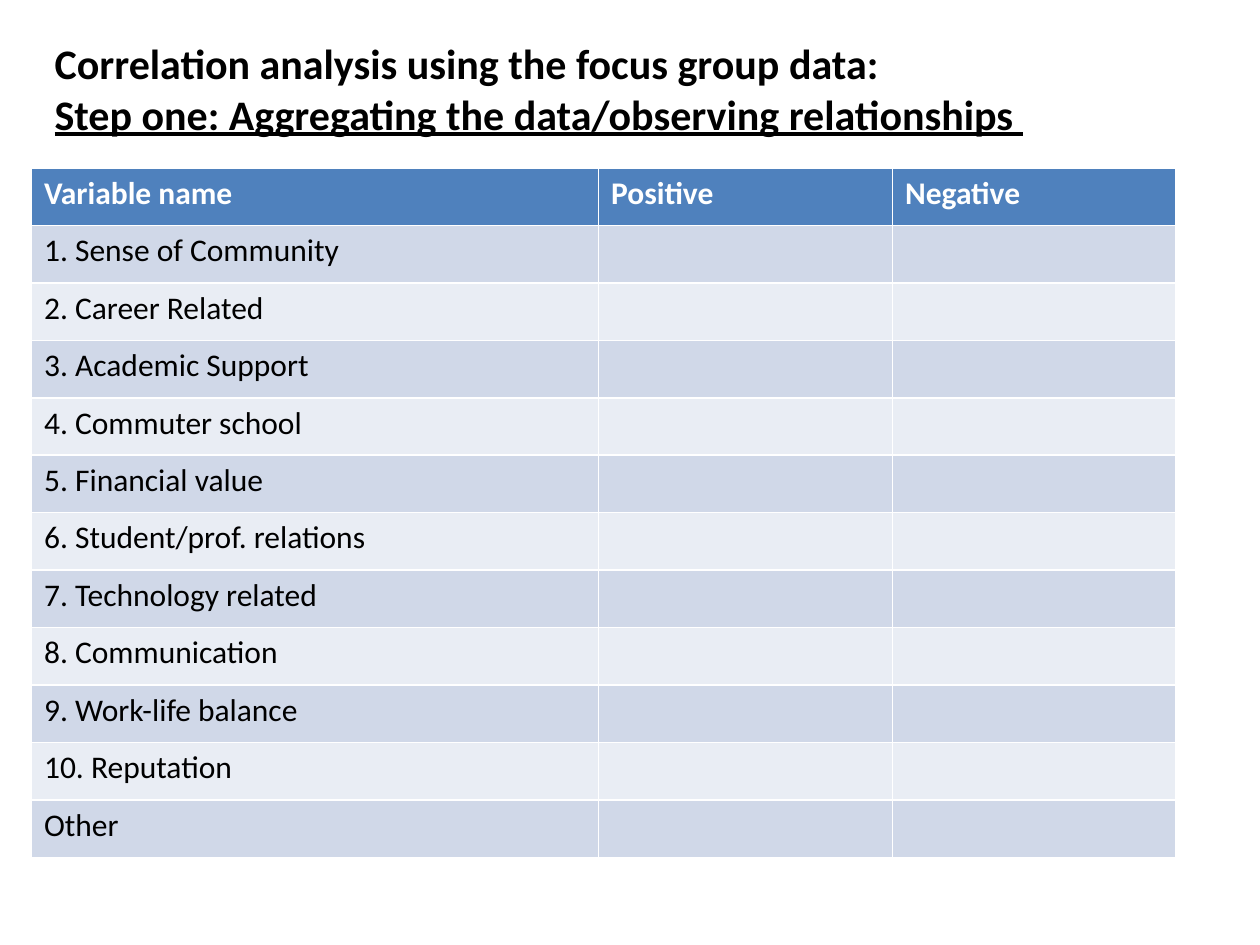
"""Build the slide with the table of focus group variables and their relationships."""
from pptx import Presentation
from pptx.dml.color import RGBColor
from pptx.enum.text import MSO_ANCHOR as Anchor, MSO_AUTO_SIZE as AutoSize, PP_ALIGN as Align
from pptx.util import Pt

COLORS = {"header": "4F81BD", "odd": "D0D8E8", "even": "E9EDF4", "white": "FFFFFF", "black": "000000"}
TITLE_LINES = [
    ("Correlation analysis using the focus group data:", False),
    ("Step one: Aggregating the data/observing relationships ", True),
]
HEADINGS = ["Variable name", "Positive", "Negative"]
VARIABLES = [
    "Sense of Community", "Career Related", "Academic Support", "Commuter school", "Financial value",
    "Student/prof. relations", "Technology related", "Communication", "Work-life balance", "Reputation",
]
COLUMN_WIDTHS = [324, 168, 162]
ROW_HEIGHT = 32.85


def add_span(para, text, size, color, bold):
    span = para.add_run()
    span.text = text
    span.font.name = "Calibri"
    span.font.size = Pt(size)
    span.font.bold = bold
    span.font.color.rgb = RGBColor.from_string(COLORS[color])
    return span


deck = Presentation()
deck.slide_width, deck.slide_height = Pt(720), Pt(540)
page = deck.slides.add_slide(deck.slide_layouts[5])

title = page.shapes.title
title.left, title.top, title.width, title.height = Pt(24), Pt(18), Pt(660), Pt(65.5)
frame = title.text_frame
frame.word_wrap = True
frame.auto_size = AutoSize.SHAPE_TO_FIT_TEXT
frame.vertical_anchor = Anchor.TOP
for index, (line, underlined) in enumerate(TITLE_LINES):
    para = frame.add_paragraph() if index else frame.paragraphs[0]
    para.alignment = Align.LEFT
    para.space_before = Pt(0)
    add_span(para, line, 24, "black", True).font.underline = underlined

labels = [f"{number}. {name}" for number, name in enumerate(VARIABLES, 1)] + ["Other"]
rows = [HEADINGS] + [[label, "", ""] for label in labels]
table = page.shapes.add_table(
    len(rows), len(HEADINGS), Pt(18), Pt(96), Pt(sum(COLUMN_WIDTHS)), Pt(ROW_HEIGHT * len(rows))
).table
for column, width in zip(table.columns, COLUMN_WIDTHS):
    column.width = Pt(width)
for row_index, texts in enumerate(rows):
    table.rows[row_index].height = Pt(ROW_HEIGHT)
    is_header = row_index == 0
    fill = "header" if is_header else "odd" if row_index % 2 else "even"
    for column_index, text in enumerate(texts):
        cell = table.cell(row_index, column_index)
        cell.fill.solid()
        cell.fill.fore_color.rgb = RGBColor.from_string(COLORS[fill])
        if text:
            add_span(cell.text_frame.paragraphs[0], text, 18, "white" if is_header else "black", is_header)

deck.save("out.pptx")
